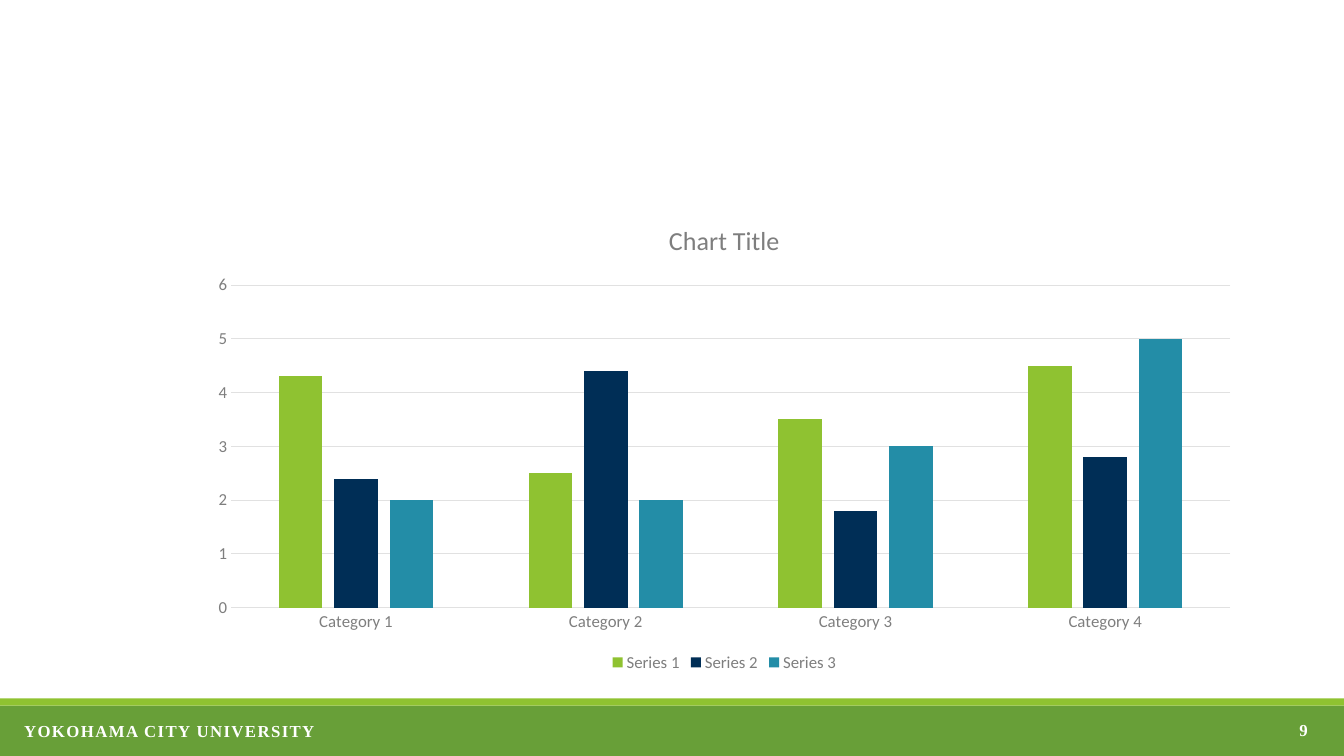
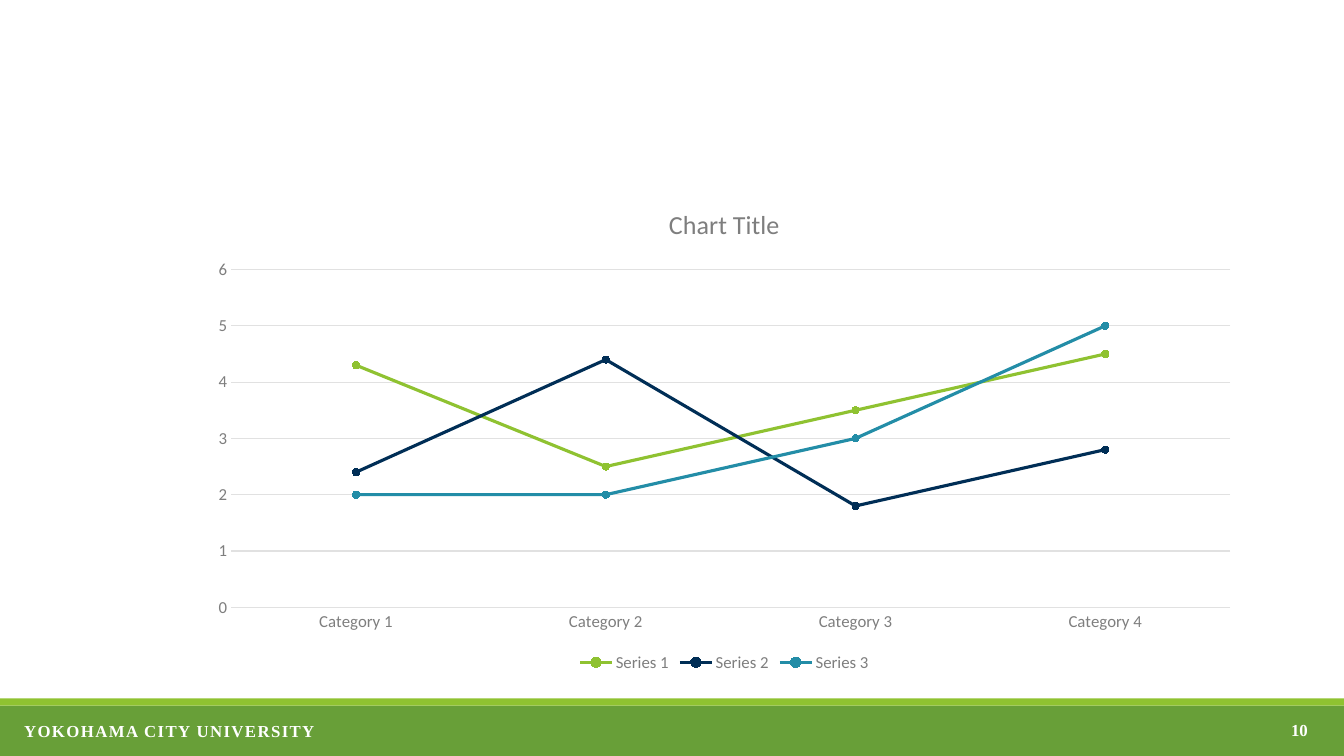
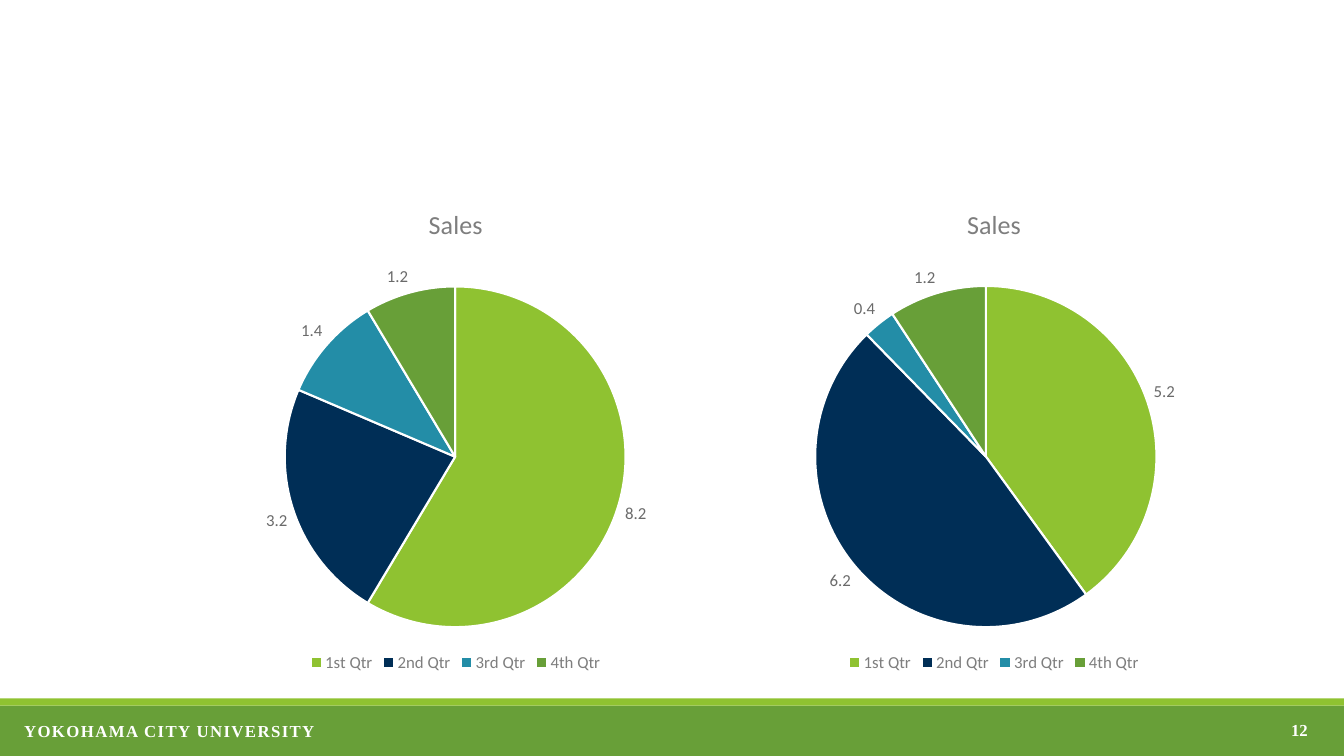
from dataclasses import dataclass

from pptx import Presentation
from pptx.chart.chart import Chart
from pptx.chart.data import CategoryChartData
from pptx.dml.color import RGBColor
from pptx.enum import chart as charts, shapes, text
from pptx.slide import Slide
from pptx.text.text import Font
from pptx.util import Inches, Length, Pt


@dataclass(frozen=True)
class Theme:
    lime: str = "8FC231"
    navy: str = "002E56"
    teal: str = "238DA7"
    green: str = "689F38"
    white: str = "FFFFFF"
    chart_text: str = "383838"
    axis_text: str = "7E7E7E"
    label_text: str = "6A6A6A"
    grid: str = "E1E1E1"
    chart_font: str = "Calibri"
    footer_font: str = "Times New Roman"
    base_size: float = 10
    small_size: float = 12
    title_size: float = 18.6

    @property
    def accents(self) -> tuple[str, ...]:
        return self.lime, self.navy, self.teal, self.green


THEME = Theme()
SLIDE_WIDTH, SLIDE_HEIGHT = Inches(13.33), Inches(7.5)
CHART_LEFT, CHART_WIDTH = Inches(1.96), Inches(10.45)
CHART_TOP, CHART_BOTTOM = Inches(1.85), Inches(6.71)
PIE_WIDTH = Inches(5.12)
PIE_STEP = Inches(5.34)


@dataclass(frozen=True)
class ChartItem:
    kind: charts.XL_CHART_TYPE
    title: str
    categories: tuple[str, ...]
    series: dict[str, tuple[float, ...]]
    left: Length = CHART_LEFT
    top: Length = CHART_TOP
    width: Length = CHART_WIDTH


@dataclass(frozen=True)
class Page:
    number: int
    items: tuple[ChartItem, ...]


CATEGORIES = tuple(f"Category {number}" for number in range(1, 5))
QUARTERS = ("1st Qtr", "2nd Qtr", "3rd Qtr", "4th Qtr")
SERIES = {
    "Series 1": (4.3, 2.5, 3.5, 4.5),
    "Series 2": (2.4, 4.4, 1.8, 2.8),
    "Series 3": (2, 2, 3, 5),
}
SALES = ((8.2, 3.2, 1.4, 1.2), (5.2, 6.2, 0.4, 1.2))
KINDS = charts.XL_CHART_TYPE

PAGES = (
    Page(9, (ChartItem(KINDS.COLUMN_CLUSTERED, "Chart Title", CATEGORIES, SERIES,
                       top=Inches(2.01)),)),
    Page(10, (ChartItem(KINDS.LINE_MARKERS, "Chart Title", CATEGORIES, SERIES),)),
    Page(12, tuple(
        ChartItem(KINDS.PIE, "Sales", QUARTERS, {"Sales": values},
                  left=CHART_LEFT + index * PIE_STEP, width=PIE_WIDTH)
        for index, values in enumerate(SALES))),
)


def rgb(color: str) -> RGBColor:
    return RGBColor.from_string(color)


def set_font(font: Font, name: str, size: float, color: str, bold: bool = False) -> None:
    font.name, font.size, font.bold = name, Pt(size), bold
    font.color.rgb = rgb(color)


def set_chart_font(font: Font, size: float = THEME.small_size,
                   color: str = THEME.axis_text) -> None:
    set_font(font, THEME.chart_font, size, color)


def paint(format_, color: str) -> None:
    format_.fill.solid()
    format_.fill.fore_color.rgb = rgb(color)


def draw_line(line, color: str, width: float) -> None:
    line.color.rgb = rgb(color)
    line.width = Pt(width)


def add_band(slide: Slide, top: Length, height: Length, color: str) -> None:
    band = slide.shapes.add_shape(
        shapes.MSO_SHAPE.RECTANGLE, 0, top, SLIDE_WIDTH, height)
    band.shadow.inherit = False
    paint(band, color)
    band.line.fill.background()


def add_footer_text(slide: Slide, words: str, left: Length, top: Length,
                    width: Length, height: Length):
    """Add one bold footer line and return its text frame."""
    frame = slide.shapes.add_textbox(left, top, width, height).text_frame
    frame.word_wrap = True
    paragraph = frame.paragraphs[0]
    paragraph.text = words
    set_font(paragraph.font, THEME.footer_font, THEME.small_size, THEME.white, bold=True)
    return frame


def add_footer(slide: Slide, number: int) -> None:
    add_band(slide, Inches(7), Inches(0.5), THEME.green)
    add_band(slide, Inches(6.93), Inches(0.07), THEME.lime)

    name = add_footer_text(slide, "YOKOHAMA CITY UNIVERSITY",
                           Inches(0.14), Inches(7.1), Inches(12.48), Inches(0.3))
    name.auto_size = text.MSO_AUTO_SIZE.SHAPE_TO_FIT_TEXT
    name.paragraphs[0].runs[0].font._element.set("spc", "100")

    page = add_footer_text(slide, str(number),
                           Inches(10.07), Inches(7.04), Inches(3), Inches(0.4))
    page.vertical_anchor = text.MSO_ANCHOR.MIDDLE
    page.paragraphs[0].alignment = text.PP_ALIGN.RIGHT


def style_axes(chart: Chart) -> None:
    for axis in (chart.category_axis, chart.value_axis):
        axis.major_tick_mark = axis.minor_tick_mark = charts.XL_TICK_MARK.NONE
        set_chart_font(axis.tick_labels.font)
    draw_line(chart.category_axis.format.line, THEME.grid, 0.75)
    values = chart.value_axis
    values.minimum_scale, values.maximum_scale, values.major_unit = 0, 6, 1
    values.format.line.fill.background()
    values.has_major_gridlines = True
    draw_line(values.major_gridlines.format.line, THEME.grid, 0.75)


def style_columns(chart: Chart) -> None:
    plot = chart.plots[0]
    plot.vary_by_categories = False
    plot.gap_width, plot.overlap = 219, -27
    for series, color in zip(plot.series, THEME.accents):
        paint(series.format, color)
    style_axes(chart)


def style_lines(chart: Chart) -> None:
    plot = chart.plots[0]
    plot.vary_by_categories = False
    for series, color in zip(plot.series, THEME.accents):
        series.smooth = False
        draw_line(series.format.line, color, 2.25)
        series.marker.style = charts.XL_MARKER_STYLE.CIRCLE
        series.marker.size = 5
        paint(series.marker.format, color)
        draw_line(series.marker.format.line, color, 0.75)
    style_axes(chart)


def style_pie(chart: Chart) -> None:
    plot = chart.plots[0]
    plot.vary_by_categories = True
    for index, color in enumerate(THEME.accents):
        point = plot.series[0].points[index]
        paint(point.format, color)
        draw_line(point.format.line, THEME.white, 1.5)
    plot.has_data_labels = True
    labels = plot.data_labels
    labels.show_value, labels.show_percentage = True, False
    labels.position = charts.XL_LABEL_POSITION.OUTSIDE_END
    set_chart_font(labels.font, color=THEME.label_text)


STYLES = {
    KINDS.COLUMN_CLUSTERED: style_columns,
    KINDS.LINE_MARKERS: style_lines,
    KINDS.PIE: style_pie,
}


def add_chart(slide: Slide, item: ChartItem) -> None:
    data = CategoryChartData()
    data.categories = item.categories
    for name, values in item.series.items():
        data.add_series(name, values)
    chart = slide.shapes.add_chart(item.kind, item.left, item.top, item.width,
                                   CHART_BOTTOM - item.top, data).chart
    set_chart_font(chart.font, THEME.base_size, THEME.chart_text)

    chart.has_title = True
    title = chart.chart_title.text_frame
    title.text = item.title
    set_chart_font(title.paragraphs[0].font, THEME.title_size)

    chart.has_legend = True
    chart.legend.position = charts.XL_LEGEND_POSITION.BOTTOM
    chart.legend.include_in_layout = False
    set_chart_font(chart.legend.font)
    STYLES[item.kind](chart)


def main() -> None:
    presentation = Presentation()
    presentation.slide_width, presentation.slide_height = SLIDE_WIDTH, SLIDE_HEIGHT
    blank = presentation.slide_layouts.get_by_name("Blank")
    for page in PAGES:
        slide = presentation.slides.add_slide(blank)
        add_footer(slide, page.number)
        for item in page.items:
            add_chart(slide, item)
    presentation.save("out.pptx")


if __name__ == "__main__":
    main()
